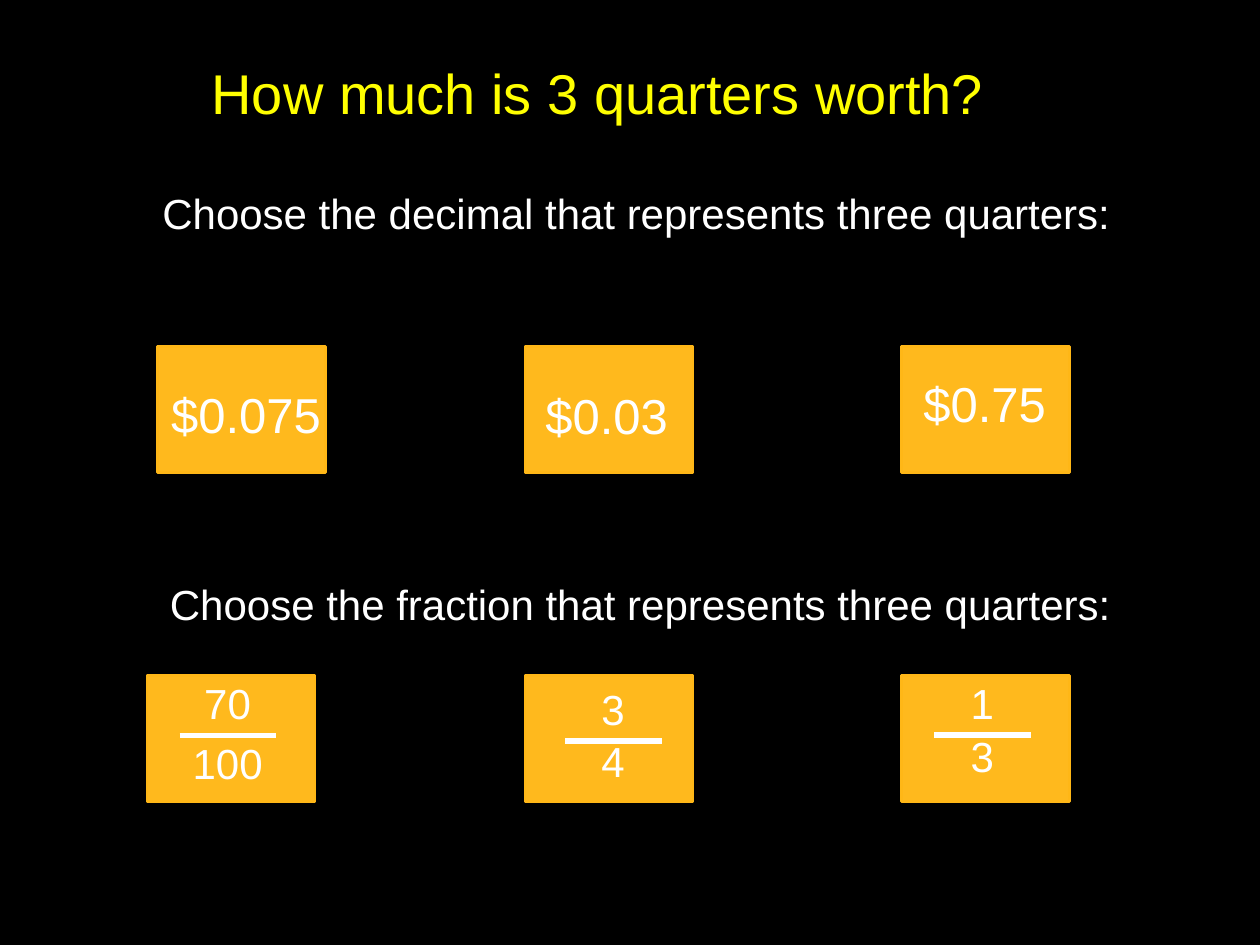
from pptx import Presentation
from pptx.dml.color import RGBColor
from pptx.enum import shapes, text
from pptx.oxml import ns
from pptx.util import Pt
from lxml import etree

COLORS = {
    "background": "000000",
    "title": "FFFF00",
    "text": "FFFFFF",
    "card": "FFB91D",
    "edge": "FFB717",
}


def color(name):
    return RGBColor.from_string(COLORS[name])


def add_label(parent, wording, left, top, width, height, size, ink="text", inset=3.6):
    box = parent.add_textbox(Pt(left), Pt(top), Pt(width), Pt(height))
    frame = box.text_frame
    frame.word_wrap = False
    frame.auto_size = text.MSO_AUTO_SIZE.NONE
    frame.margin_top = Pt(inset)
    frame.text = wording
    font = frame.paragraphs[0].runs[0].font
    font.name = "Arial"
    font.size = Pt(size)
    font.color.rgb = color(ink)


deck = Presentation()
deck.slide_width, deck.slide_height = Pt(720), Pt(540)
page = deck.slides.add_slide(deck.slide_layouts[6])
page.background.fill.solid()
page.background.fill.fore_color.rgb = color("background")

add_label(page.shapes, "How much is 3 quarters worth?", 113.8, 30, 460, 46, 32, "title")
for kind, left, top, width in (("decimal", 85.7, 82.8, 561.6), ("fraction", 90, 306, 557.3)):
    add_label(page.shapes, f"Choose the {kind} that represents three quarters:",
              left, top, width, 80, 24, inset=24.5)

for top, lefts in ((198, (90, 300, 515)), (386, (84, 300, 515))):
    for left in lefts:
        card = page.shapes.add_shape(shapes.MSO_SHAPE.RECTANGLE, Pt(left), Pt(top), Pt(96), Pt(72))
        card.shadow.inherit = False
        card.fill.solid()
        card.fill.fore_color.rgb = color("card")
        card.line.color.rgb = color("edge")
        card.line.width = Pt(1.5)

for amount, left, top, width in (
    ("$0.075", 90.7, 216, 100.8),
    ("$0.03", 304.6, 216.7, 85),
    ("$0.75", 520.6, 210.2, 85),
):
    add_label(page.shapes, amount, left, top, width, 41, 28)

BAR_WIDTH = 55
DIGIT_WIDTH = 13.35
for numerator, denominator, center, upper, bar_top, lower in (
    ("70", "100", 130.2, 383.8, 420.3, 418),
    ("3", "4", 350.5, 387, 423.5, 417),
    ("1", "3", 561.5, 383.8, 420, 414),
):
    fraction = page.shapes.add_group_shape().shapes
    for number, top in ((numerator, upper), (denominator, lower)):
        width = 14.4 + DIGIT_WIDTH * len(number)
        add_label(fraction, number, center - width / 2, top, width, 36, 24)
    bar = fraction.add_connector(shapes.MSO_CONNECTOR.STRAIGHT,
                                 Pt(center - BAR_WIDTH / 2), Pt(bar_top),
                                 Pt(center + BAR_WIDTH / 2), Pt(bar_top))
    bar.line.color.rgb = color("text")
    bar.line.width = Pt(3)
    etree.SubElement(bar._element.spPr, ns.qn("a:effectLst"))

deck.save("out.pptx")
